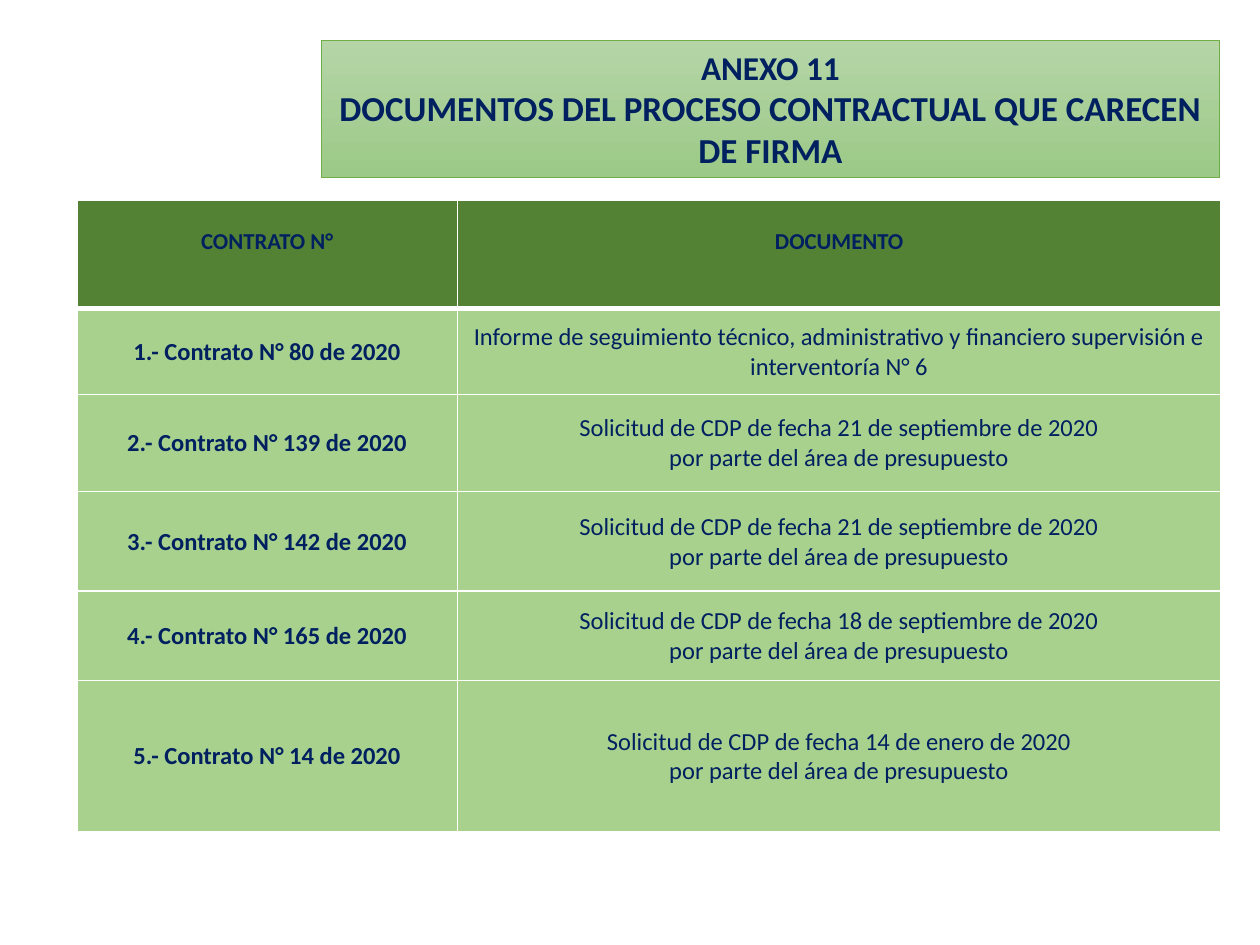
from pptx import Presentation, util as u
from pptx.dml.color import RGBColor
from pptx.enum import text
from pptx.oxml import parse_xml
from pptx.oxml.ns import nsdecls

theme = dict(
    font="Calibri", ink="002060", head="548235", body="A9D18E",
    edge="70AD47", light="B5D5A7", deep="9CC987", rule="FFFFFF",
    lead=19, title=20, label=13, text=14,
)
color = {k: RGBColor.from_string(v) for k, v in theme.items()
         if isinstance(v, str) and k != "font"}


def style(par, size, bold):
    par.alignment = text.PP_ALIGN.CENTER
    par.font.name = theme["font"]
    par.font.size = u.Pt(theme[size])
    par.font.bold = bold
    par.font.color.rgb = color["ink"]


def border(cell, side, width):
    cell._tc.get_or_add_tcPr().append(parse_xml(
        f'<a:{side} {nsdecls("a")} w="{u.Pt(width)}"><a:solidFill>'
        f'<a:srgbClr val="{theme["rule"]}"/></a:solidFill></a:{side}>'))


deck = Presentation()
deck.slide_width, deck.slide_height = u.Inches(10), u.Inches(7.5)
slide = deck.slides.add_slide(deck.slide_layouts[5])

title = slide.shapes.title
title.left, title.top = u.Inches(2.55), u.Inches(0.32)
title.width, title.height = u.Inches(7.13), u.Inches(1.09)
title.fill.gradient()
title.fill.gradient_angle = 270
for stop, name, place in zip(title.fill.gradient_stops, ("light", "deep"), (0, 1)):
    stop.color.rgb = color[name]
    stop.position = place
title.line.color.rgb = color["edge"]
title.line.width = u.Pt(0.5)
frame = title.text_frame
frame.text = "ANEXO 11\nDOCUMENTOS DEL PROCESO CONTRACTUAL QUE CARECEN DE FIRMA"
frame.word_wrap = True
frame.auto_size = text.MSO_AUTO_SIZE.NONE
frame.vertical_anchor = text.MSO_ANCHOR.MIDDLE
for par, size in zip(frame.paragraphs, ("lead", "title")):
    style(par, size, True)
    par.space_before = u.Pt(0)

request = "Solicitud de CDP de fecha {} de 2020\vpor parte del área de presupuesto"
rows = [
    ("CONTRATO N°", "DOCUMENTO", 0.86),
    ("1.- Contrato N° 80 de 2020",
     "Informe de seguimiento técnico, administrativo y financiero "
     "supervisión e interventoría N° 6", 0.68),
    ("2.- Contrato N° 139 de 2020", request.format("21 de septiembre"), 0.77),
    ("3.- Contrato N° 142 de 2020", request.format("21 de septiembre"), 0.79),
    ("4.- Contrato N° 165 de 2020", request.format("18 de septiembre"), 0.71),
    ("5.- Contrato N° 14 de 2020", request.format("14 de enero"), 1.2),
]
cols = (3.02, 6.06)
table = slide.shapes.add_table(
    len(rows), len(cols), u.Inches(0.61), u.Inches(1.59),
    u.Inches(sum(cols)), u.Inches(sum(row[-1] for row in rows))).table
for col, width in zip(table.columns, cols):
    col.width = u.Inches(width)

for r, (*words, height) in enumerate(rows):
    table.rows[r].height = u.Inches(height)
    top = r == 0
    for c, word in enumerate(words):
        cell = table.cell(r, c)
        cell.text = word
        cell.vertical_anchor = text.MSO_ANCHOR.MIDDLE
        cell.margin_left = cell.margin_right = cell.margin_top = u.Inches(0.01)
        cell.margin_bottom = u.Inches(0.22 if top else 0)
        style(cell.text_frame.paragraphs[0], "label" if top else "text", top or c == 0)
        for side in ("lnL", "lnR", "lnT", "lnB"):
            thick = (r, side) in ((0, "lnB"), (1, "lnT"))
            border(cell, side, 3 if thick else 1)
        cell.fill.solid()
        cell.fill.fore_color.rgb = color["head" if top else "body"]

deck.save("out.pptx")
